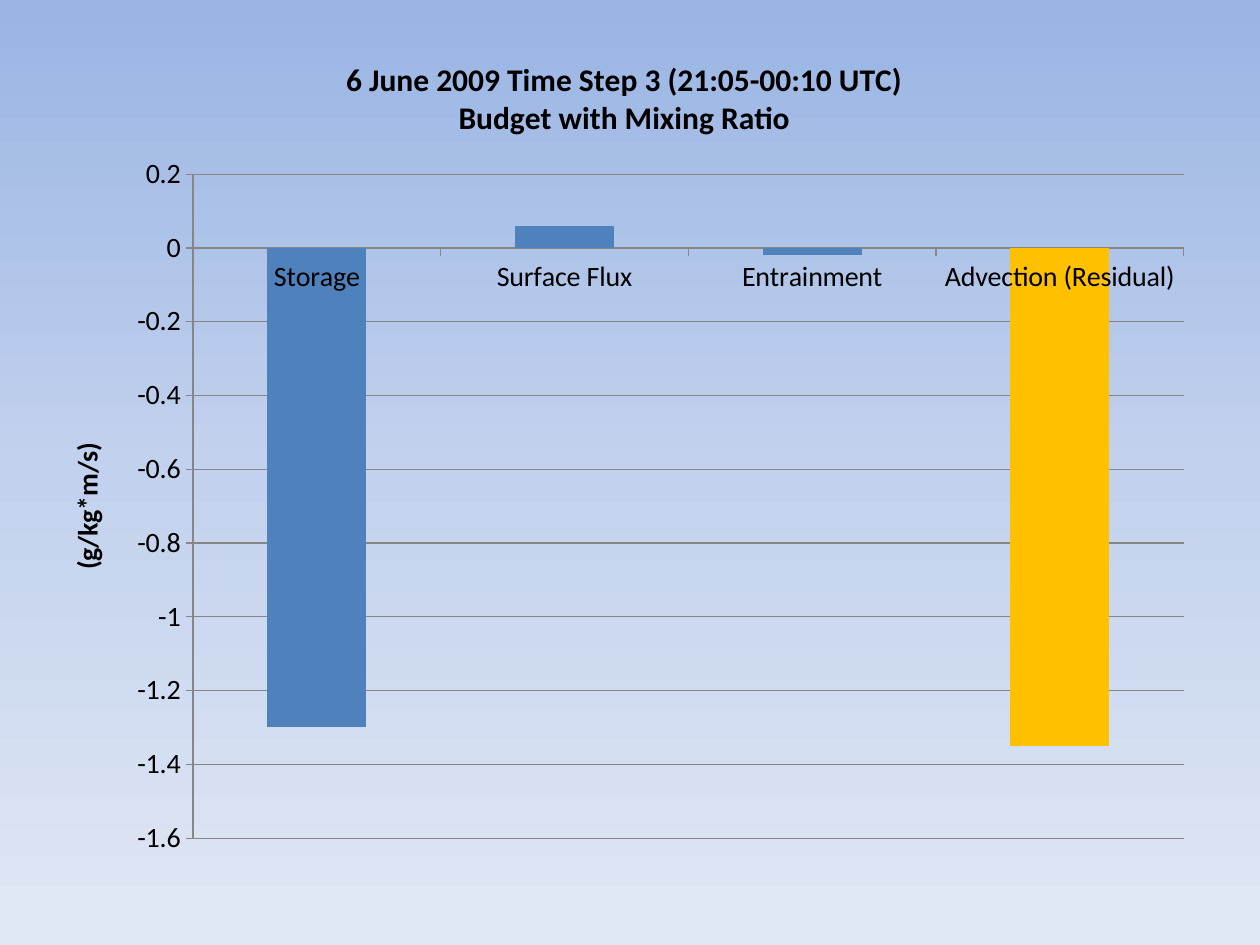
"""Build a slide with a column chart of a mixing ratio budget."""
from copy import deepcopy
from lxml.etree import SubElement
from pptx import Presentation
from pptx.chart.data import CategoryChartData
from pptx.dml.color import RGBColor
from pptx.enum.chart import XL_CHART_TYPE, XL_TICK_MARK
from pptx.oxml.ns import qn
from pptx.util import Inches, Pt

HUES = {"top": "9AB5E4", "mid": "C2D1ED", "base": "E1E8F5", "text": "000000",
        "grid": "868686", "bar": "4F81BD", "rest": "FFC000"}


def paint(fill, name):
    fill.solid()
    fill.fore_color.rgb = RGBColor.from_string(HUES[name])


def write(frame, lines, size):
    for i, line in enumerate(lines):
        para = frame.add_paragraph() if i else frame.paragraphs[0]
        run = para.add_run()
        run.text = line
        run.font.size = Pt(size)
        run.font.bold = True
        run.font.name = "Calibri"
        paint(run.font.fill, "text")


deck = Presentation()
deck.slide_width, deck.slide_height = Inches(10), Inches(7.5)
slide = deck.slides.add_slide(deck.slide_layouts[6])

back = slide.background.fill
back.gradient()
back.gradient_angle = 270
stops = slide.element.xpath(".//a:gsLst")[0]
stops.insert(1, deepcopy(stops[0]))
for stop, name, place in zip(back.gradient_stops, ("top", "mid", "base"), (0, 0.5, 1)):
    stop.color.rgb = RGBColor.from_string(HUES[name])
    stop.position = place

data = CategoryChartData()
data.categories = ["Storage", "Surface Flux", "Entrainment", "Advection (Residual)"]
data.add_series("Series 1", (-1.3, 0.06, -0.02, -1.35))
chart = slide.shapes.add_chart(XL_CHART_TYPE.COLUMN_CLUSTERED, Inches(0.33), Inches(0.25),
                               Inches(9.25), Inches(6.67), data).chart
chart.font.name = "Calibri"
chart.font.size = Pt(10)
paint(chart.font.fill, "text")
chart.has_legend = False
chart.has_title = True
write(chart.chart_title.text_frame,
      ("6 June 2009 Time Step 3 (21:05-00:10 UTC)", "Budget with Mixing Ratio"), 18)
chart.chart_title.include_in_layout = False

plot = chart.plots[0]
plot.gap_width = 150
plot.vary_by_categories = False
bars = plot.series[0]
bars.invert_if_negative = False
paint(bars.format.fill, "bar")
paint(bars.points[3].format.fill, "rest")

vals = chart.value_axis
vals.minimum_scale, vals.maximum_scale, vals.major_unit = -1.6, 0.2, 0.2
vals.has_major_gridlines = True
vals.tick_labels.number_format = "General"
vals.tick_labels.number_format_is_linked = False
write(vals.axis_title.text_frame, ("(g/kg*m/s)",), 16)
vals.axis_title.element.xpath(".//a:bodyPr")[0].set("rot", "-5400000")
for axis in (chart.category_axis, vals):
    axis.tick_labels.font.size = Pt(16)
    axis.major_tick_mark = XL_TICK_MARK.OUTSIDE
    axis.minor_tick_mark = XL_TICK_MARK.NONE
for part in (chart.category_axis, vals, vals.major_gridlines):
    paint(part.format.line.fill, "grid")
    part.format.line.width = Pt(0.75)

area = chart.element.xpath(".//c:plotArea")[0]
for old in area.findall(qn("c:layout")):
    area.remove(old)
layout = SubElement(area, qn("c:layout"))
area.insert(0, layout)
manual = SubElement(layout, qn("c:manualLayout"))
for tag, val in (("layoutTarget", "inner"), ("xMode", "edge"), ("yMode", "edge"),
                 ("x", "0.13"), ("y", "0.17"), ("w", "0.85"), ("h", "0.79")):
    SubElement(manual, qn("c:" + tag)).set("val", val)

deck.save("out.pptx")
